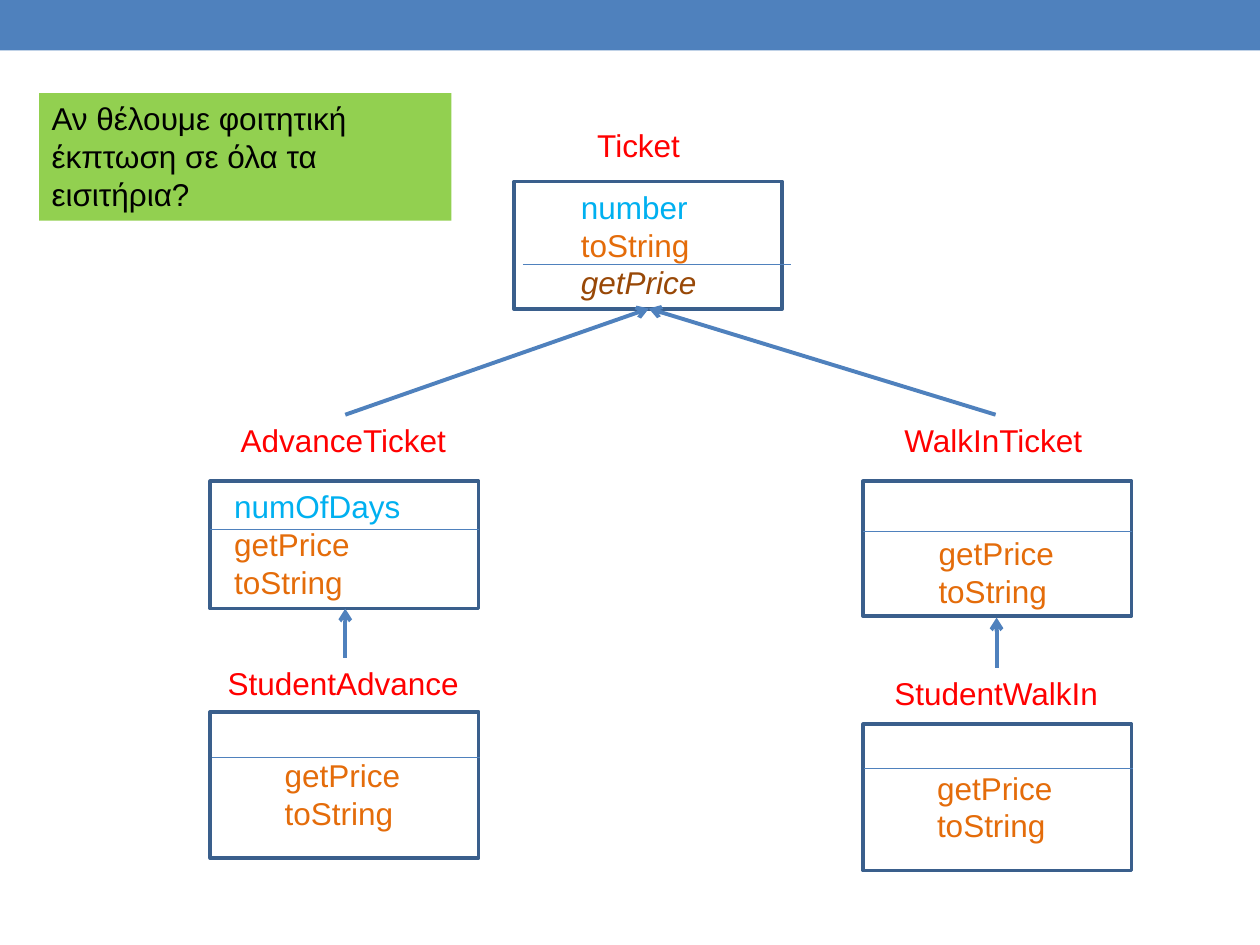
from dataclasses import dataclass

from lxml import etree
from pptx import Presentation
from pptx.dml.color import RGBColor
from pptx.enum.shapes import MSO_CONNECTOR as Connector, MSO_SHAPE as Shape
from pptx.enum.text import MSO_ANCHOR as Anchor, MSO_AUTO_SIZE as AutoSize, PP_ALIGN as Align
from pptx.oxml.ns import qn
from pptx.util import Cm, Pt

BLUE = RGBColor(0x4F, 0x81, 0xBD)
DARK_BLUE = RGBColor(0x3A, 0x5F, 0x8C)
GREEN = RGBColor(0x92, 0xD0, 0x50)
BLACK = RGBColor(0x00, 0x00, 0x00)
RED = RGBColor(0xFF, 0x00, 0x00)
CYAN = RGBColor(0x00, 0xB0, 0xF0)
ORANGE = RGBColor(0xE4, 0x6C, 0x0A)
BROWN = RGBColor(0x98, 0x48, 0x07)

BOX_WIDTH = 5.41
LINE_HEIGHT = 0.77
TEXT_MARGINS = 0.25

FIELD, METHOD, ABSTRACT = (CYAN, False), (ORANGE, False), (BROWN, True)
OVERRIDES = [("getPrice", METHOD), ("toString", METHOD)]


@dataclass
class ClassBox:
    name: str
    title: tuple
    box: tuple
    members_at: tuple
    divider: tuple
    members: list


CLASSES = [
    ClassBox("AdvanceTicket", (4.6, 8.36, 4.7), (4.24, 9.7, 2.57),
             (4.47, 9.7, 3.89), (4.24, 10.67),
             [("numOfDays", FIELD)] + OVERRIDES),
    ClassBox("WalkInTicket", (17.98, 8.36, 4.14), (17.4, 9.7, 2.72),
             (18.67, 10.64, 2.87), (17.4, 10.72), OVERRIDES),
    ClassBox("StudentAdvance", (4.34, 13.26, 5.21), (4.24, 14.35, 2.95),
             (5.49, 15.11, 2.87), (4.27, 15.27), OVERRIDES),
    ClassBox("Ticket", (11.79, 2.41, 2.21), (10.36, 3.66, 2.57),
             (11.46, 3.66, 2.9), (10.54, 5.33),
             [("number", FIELD), ("toString", METHOD), ("getPrice", ABSTRACT)]),
    ClassBox("StudentWalkIn", (17.78, 13.46, 4.65), (17.4, 14.6, 2.95),
             (18.64, 15.37, 2.87), (17.42, 15.49), OVERRIDES),
]

INHERITANCE = [
    ((6.96, 13.26), (6.96, 12.27)),
    ((6.96, 8.36), (13.08, 6.22)),
    ((20.07, 8.36), (13.08, 6.22)),
    ((20.09, 13.46), (20.09, 12.45)),
]


def add_rectangle(slide, left, top, width, height, fill=None, outline=None):
    shape = slide.shapes.add_shape(Shape.RECTANGLE, Cm(left), Cm(top), Cm(width), Cm(height))
    shape.shadow.inherit = False
    if fill is None:
        shape.fill.background()
    else:
        shape.fill.solid()
        shape.fill.fore_color.rgb = fill
    if outline is None:
        shape.line.fill.background()
    else:
        shape.line.color.rgb = outline
        shape.line.width = Pt(2.08)
    return shape


def style_font(font, color, italic=False):
    font.name = "Arial"
    font.size = Pt(18)
    font.color.rgb = color
    font.italic = italic


def add_text(slide, left, top, width, lines):
    height = TEXT_MARGINS + LINE_HEIGHT * len(lines)
    text_box = slide.shapes.add_textbox(Cm(left), Cm(top), Cm(width), Cm(height))
    frame = text_box.text_frame
    frame.word_wrap = False
    frame.auto_size = AutoSize.SHAPE_TO_FIT_TEXT
    frame.text = "\n".join(text for text, style in lines)
    for paragraph, (text, style) in zip(frame.paragraphs, lines):
        style_font(paragraph.font, *style)


def add_line(slide, start, end, width, arrow=False):
    points = [Cm(value) for value in (*start, *end)]
    connector = slide.shapes.add_connector(Connector.STRAIGHT, *points)
    connector.line.color.rgb = BLUE
    connector.line.width = Pt(width)
    if arrow:
        etree.SubElement(connector.line._get_or_add_ln(), qn("a:tailEnd"), type="arrow")
    etree.SubElement(connector._element.spPr, qn("a:effectLst"))


def add_class(slide, item):
    left, top, height = item.box
    add_rectangle(slide, left, top, BOX_WIDTH, height, outline=DARK_BLUE)
    add_text(slide, *item.members_at, item.members)
    add_text(slide, *item.title, [(item.name, (RED, False))])
    x, y = item.divider
    add_line(slide, (x, y), (x + BOX_WIDTH, y), 0.75)


def add_question(slide):
    shape = add_rectangle(slide, 0.79, 1.88, 8.31, 2.57, fill=GREEN)
    frame = shape.text_frame
    frame.word_wrap = True
    frame.auto_size = AutoSize.SHAPE_TO_FIT_TEXT
    frame.vertical_anchor = Anchor.TOP
    frame.text = "Αν θέλουμε φοιτητική έκπτωση σε όλα τα εισιτήρια?"
    paragraph = frame.paragraphs[0]
    paragraph.alignment = Align.LEFT
    style_font(paragraph.font, BLACK)


def main():
    presentation = Presentation()
    presentation.slide_width = Cm(25.4)
    presentation.slide_height = Cm(19.05)
    slide = presentation.slides.add_slide(presentation.slide_layouts[6])
    add_rectangle(slide, 0, 0, 25.4, 1.02, fill=BLUE)
    for item in CLASSES:
        add_class(slide, item)
    for child, parent in INHERITANCE:
        add_line(slide, child, parent, 2.25, arrow=True)
    add_question(slide)
    presentation.save("out.pptx")


if __name__ == "__main__":
    main()
